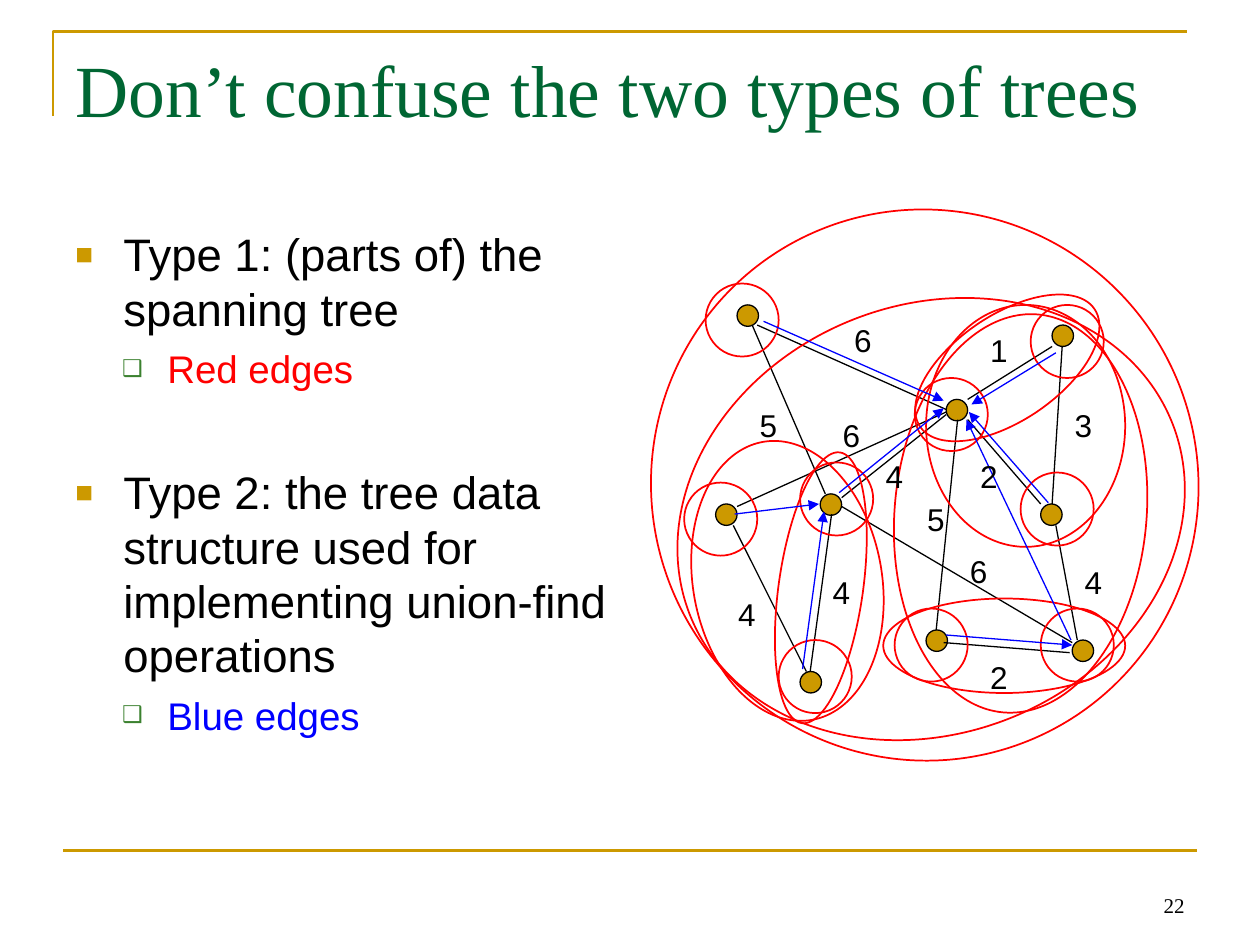
"""Build a slide contrasting spanning tree edges with union-find tree edges."""
import pptx
import pptx.dml.color
import pptx.enum.shapes
import pptx.enum.text
import pptx.oxml.ns
import pptx.util
from lxml import etree

PX = 9144
GOLD, BLACK, RED, BLUE = "CC9900", "000000", "FF0000", "0000FF"


def rgb(value):
    return pptx.dml.color.RGBColor.from_string(value)


def style(paragraph, size, face, color):
    for run in paragraph.runs:
        run.font.size = pptx.util.Pt(size)
        run.font.name = face
        run.font.color.rgb = rgb(color)


deck = pptx.Presentation()
deck.slide_width, deck.slide_height = 1000 * PX, 750 * PX
slide = deck.slides.add_slide(deck.slide_layouts[5])
shapes = slide.shapes

corner_path = shapes.build_freeform(42, 92, scale=PX)
corner_path.add_line_segments([(42, 25), (942, 25)], close=False)
corner = corner_path.convert_to_shape()
corner.fill.background()
corner.line.color.rgb = rgb(GOLD)
corner.line.width = pptx.util.Pt(1.5)
corner.shadow.inherit = False

heading = shapes.title
heading.left, heading.top, heading.width, heading.height = 50 * PX, 30 * PX, 900 * PX, 125 * PX
heading.text_frame.text = "Don’t confuse the two types of trees"
heading.text_frame.vertical_anchor = pptx.enum.text.MSO_ANCHOR.TOP
heading.text_frame.auto_size = pptx.enum.text.MSO_AUTO_SIZE.NONE
heading.text_frame.paragraphs[0].alignment = pptx.enum.text.PP_ALIGN.LEFT
style(heading.text_frame.paragraphs[0], 42, "Times New Roman", "006633")

explanation = shapes.add_textbox(50 * PX, 175 * PX, 442 * PX, 495 * PX).text_frame
explanation.word_wrap = True
points = [
    ("Type 1: (parts of) the spanning tree", 0, BLACK, 5),
    ("Red edges", 1, RED, 6),
    ("Type 2: the tree data structure used for implementing union-find operations", 0, BLACK, 42),
    ("Blue edges", 1, BLUE, 6),
]
levels = [(26, 31, 38, 38, "■", GOLD, 65), (22, 26, 73, 36, "❑", "3B812F", 60)]
for index, (wording, level, color, gap) in enumerate(points):
    size, pitch, margin, hanging, bullet, bullet_color, bullet_size = levels[level]
    point = explanation.add_paragraph() if index else explanation.paragraphs[0]
    point.text = wording
    point.level = level
    point.space_before = pptx.util.Pt(gap)
    point.line_spacing = pptx.util.Pt(pitch)
    style(point, size, "Arial", color)
    properties = point._p.get_or_add_pPr()
    properties.set("marL", str(margin * PX))
    properties.set("indent", str(-hanging * PX))
    bullet_fill = etree.SubElement(properties, pptx.oxml.ns.qn("a:buClr"))
    etree.SubElement(bullet_fill, pptx.oxml.ns.qn("a:srgbClr"), val=bullet_color)
    etree.SubElement(properties, pptx.oxml.ns.qn("a:buSzPct"), val=str(bullet_size * 1000))
    etree.SubElement(properties, pptx.oxml.ns.qn("a:buFont"), typeface="Arial")
    etree.SubElement(properties, pptx.oxml.ns.qn("a:buChar"), char=bullet)

vertices = [(585, 242), (835, 258), (826, 400), (635, 533), (651, 392),
            (735, 500), (751, 317), (568, 400), (851, 508)]
graph_edges = [
    (597, 258, 655, 392), (660, 408, 643, 533), (582, 417, 640, 533), (743, 500, 760, 333),
    (768, 317, 835, 275), (768, 333, 826, 400), (749, 510, 849, 518), (668, 402, 851, 510),
    (668, 395, 751, 329), (835, 400, 843, 275), (838, 417, 855, 508), (585, 402, 751, 327),
    (601, 258, 751, 325),
]
singletons = [(818, 242), (810, 375), (826, 483), (710, 483), (726, 300),
              (560, 225), (635, 367), (618, 508), (543, 383)]
merged_sets = [
    (716, 250, 167, 84, 326), (735, 242, 158, 192, 0), (710, 249, 200, 317, 5),
    (701, 475, 192, 75, 0), (618, 358, 67, 217, 8), (550, 349, 150, 224, 350),
    (533, 242, 412, 340, 338), (517, 166, 434, 438, 338),
]
parent_links = [
    (771, 321, 838, 280), (769, 327, 832, 399), (851, 512, 751, 504), (767, 333, 850, 508),
    (654, 406, 637, 531), (650, 400, 583, 408), (749, 324, 666, 391), (749, 318, 606, 255),
]
layers = [
    ([], [(50, 675, 950, 675)], None, GOLD, GOLD, 1.5, 1.5),
    ([(x, y, 17, 17, 0) for x, y in vertices], graph_edges, GOLD, BLACK, BLACK, 0.75, 0.75),
    ([(x, y, 58, 58, 0) for x, y in singletons] + merged_sets, parent_links, None, RED, BLUE, 1, 0.75),
]
for ovals, edges, fill, outline, edge_color, outline_width, edge_width in layers:
    for left, top, width, height, angle in ovals:
        oval = shapes.add_shape(pptx.enum.shapes.MSO_SHAPE.OVAL,
                                left * PX, top * PX, width * PX, height * PX)
        oval.rotation = angle
        oval.shadow.inherit = False
        if fill:
            oval.fill.solid()
            oval.fill.fore_color.rgb = rgb(fill)
        else:
            oval.fill.background()
        oval.line.color.rgb = rgb(outline)
        oval.line.width = pptx.util.Pt(outline_width)
    for ends in edges:
        edge = shapes.add_connector(pptx.enum.shapes.MSO_CONNECTOR.STRAIGHT, *[end * PX for end in ends])
        edge.line.color.rgb = rgb(edge_color)
        edge.line.width = pptx.util.Pt(edge_width)
        if edge_color == BLUE:
            etree.SubElement(edge.line._get_or_add_ln(), pptx.oxml.ns.qn("a:headEnd"), type="triangle")
        etree.SubElement(edge._element.spPr, pptx.oxml.ns.qn("a:effectLst"))

weights = [
    ("6", 668, 250), ("1", 776, 258), ("5", 593, 317), ("4", 576, 467), ("6", 760, 433),
    ("5", 726, 392), ("4", 693, 358), ("2", 776, 517), ("4", 851, 442), ("3", 843, 317),
    ("4", 651, 450), ("2", 768, 358), ("6", 659, 325),
]
for weight, left, top in weights:
    weight_frame = shapes.add_textbox(left * PX, top * PX, 34 * PX, 40 * PX).text_frame
    weight_frame.word_wrap = False
    weight_frame.text = weight
    style(weight_frame.paragraphs[0], 18, "Arial", BLACK)

page_number = shapes.add_textbox(717 * PX, 683 * PX, 233 * PX, 50 * PX).text_frame
page_number.word_wrap = True
page_number.vertical_anchor = pptx.enum.text.MSO_ANCHOR.BOTTOM
page_number.text = "22"
page_number.paragraphs[0].alignment = pptx.enum.text.PP_ALIGN.RIGHT
style(page_number.paragraphs[0], 12, "Times New Roman", BLACK)

deck.save("out.pptx")
